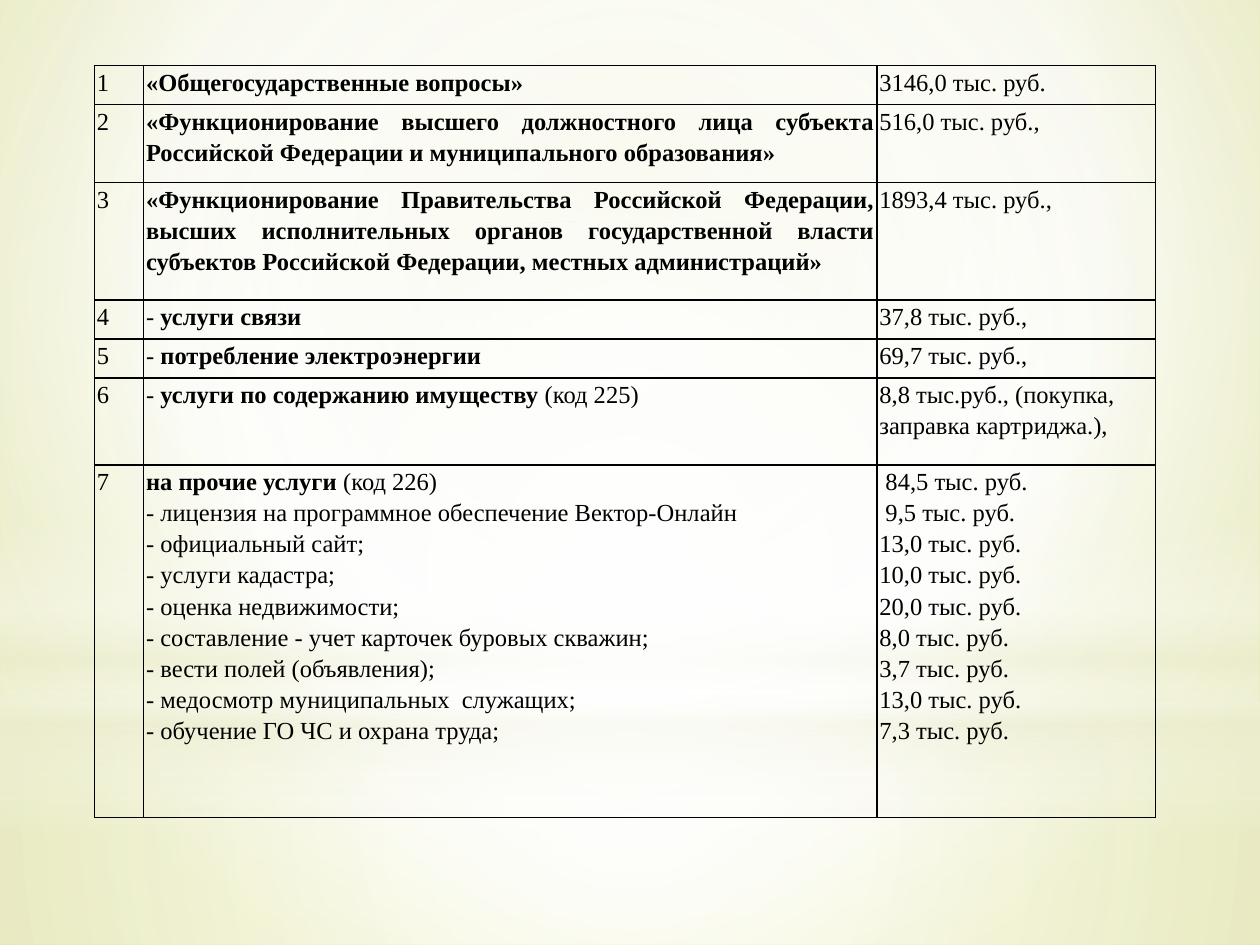
from lxml.etree import SubElement
from pptx import Presentation
from pptx.dml.color import RGBColor
from pptx.enum.shapes import MSO_SHAPE
from pptx.enum.text import PP_ALIGN
from pptx.oxml import parse_xml
from pptx.oxml.ns import nsdecls, qn
from pptx.util import Pt

PX = 9144  # EMU in one px: 100 px to the inch
BLACK = "000000"


def color(hex_value):
    return RGBColor.from_string(hex_value)


def set_gradient(fill, element, stops, focus=None):
    """Stops are (position %, colour, opacity %); focus is l, t, r, b in %."""
    fill.solid()
    solid = element.find(".//" + qn("a:solidFill"))
    gradient = parse_xml(f'<a:gradFill {nsdecls("a")} rotWithShape="1"/>')
    stop_list = SubElement(gradient, qn("a:gsLst"))
    for position, hex_value, opacity in stops:
        stop = SubElement(stop_list, qn("a:gs"), pos=str(position * 1000))
        tint = SubElement(stop, qn("a:srgbClr"), val=hex_value)
        SubElement(tint, qn("a:alpha"), val=str(opacity * 1000))
    if focus:
        circle = SubElement(gradient, qn("a:path"), path="circle")
        sides = {side: str(value * 1000) for side, value in zip("ltrb", focus)}
        SubElement(circle, qn("a:fillToRect"), sides)
    else:
        SubElement(gradient, qn("a:lin"), ang="5400000", scaled="0")
    solid.getparent().replace(solid, gradient)


prs = Presentation()
prs.slide_width, prs.slide_height = 1000 * PX, 750 * PX
slide = prs.slides.add_slide(prs.slide_layouts[6])

# Background and its soft light layers
set_gradient(slide.background.fill, slide._element,
             [(0, "E9EBC1", 100), (60, "FFFFFF", 100), (100, "DEE285", 100)],
             (20, 10, 20, 60))

CENTER = (50, 50, 50, 50)
light_layers = [
    (MSO_SHAPE.RECTANGLE, 558, 192, CENTER,
     [(0, "FFFFFF", 91), (37, "FFFFFF", 76), (100, "ECEDD1", 79)]),
    (MSO_SHAPE.RECTANGLE, 0, 558, CENTER,
     [(0, "FFFFFF", 89), (48, "FFFFFF", 62), (100, "ECEDD1", 79)]),
    (MSO_SHAPE.RECTANGLE, 412, 250, None,
     [(0, "FFFFFF", 0), (29, "FFFFFF", 30), (45, "ECEDD1", 40),
      (55, "FFFFFF", 26), (65, "ECEDD1", 60), (100, "FFFFFF", 0)]),
    (MSO_SHAPE.OVAL, 175, 558, CENTER,
     [(0, "FFFFFF", 100), (56, "FFFFFF", 0)]),
]
for outline, top, height, focus, stops in light_layers:
    layer = slide.shapes.add_shape(outline, 0, top * PX, 1000 * PX, height * PX)
    layer.shadow.inherit = False
    layer.line.fill.background()
    set_gradient(layer.fill, layer._element, stops, focus)

# Expenses: row height, item lines, amount lines; ** marks bold text
expenses = [
    (31, ["**«Общегосударственные вопросы»"], ["3146,0 тыс. руб."]),
    (62, ["**«Функционирование высшего должностного лица субъекта "
          "Российской Федерации и муниципального образования»"],
     ["516,0 тыс. руб.,"]),
    (93, ["**«Функционирование Правительства Российской Федерации, "
          "высших исполнительных органов государственной власти субъектов "
          "Российской Федерации, местных администраций»"],
     ["1893,4 тыс. руб.,"]),
    (31, ["- **услуги связи"], ["37,8 тыс. руб.,"]),
    (31, ["- **потребление электроэнергии"], ["69,7 тыс. руб.,"]),
    (69, ["- **услуги по содержанию имуществу **(код 225)"],
     ["8,8 тыс.руб., (покупка, заправка картриджа.),"]),
    (280, ["**на прочие услуги **(код 226)",
           "- лицензия на программное обеспечение Вектор-Онлайн",
           "- официальный сайт;",
           "- услуги кадастра;",
           "- оценка недвижимости;",
           "- составление - учет карточек буровых скважин;",
           "- вести полей (объявления);",
           "- медосмотр муниципальных  служащих;",
           "- обучение ГО ЧС и охрана труда;"],
     [" 84,5 тыс. руб.", " 9,5 тыс. руб.", "13,0 тыс. руб.",
      "10,0 тыс. руб.", "20,0 тыс. руб.", "8,0 тыс. руб.",
      "3,7 тыс. руб.", "13,0 тыс. руб.", "7,3 тыс. руб."]),
]
JUSTIFIED_ROWS = (2, 3)
COLUMN_WIDTHS = (39, 582, 221)
CELL_FORMAT = {"margin_left": 2 * PX, "margin_right": 2 * PX,
               "margin_top": 0, "margin_bottom": 0}
FONT_FORMAT = {"name": "Times New Roman", "size": Pt(14)}

frame = slide.shapes.add_table(
    len(expenses), len(COLUMN_WIDTHS), 75 * PX, 52 * PX,
    sum(COLUMN_WIDTHS) * PX, sum(row[0] for row in expenses) * PX)
budget = frame.table
budget.first_row = budget.horz_banding = False
for column, width in zip(budget.columns, COLUMN_WIDTHS):
    column.width = width * PX

for number, (height, items, amounts) in enumerate(expenses, 1):
    row = budget.rows[number - 1]
    row.height = height * PX
    for column, lines in enumerate(([str(number)], items, amounts)):
        cell = row.cells[column]
        for name, value in CELL_FORMAT.items():
            setattr(cell, name, value)
        cell.fill.background()

        # Thin black border on every side
        for place, side in enumerate("LRTB"):
            cell._tc.tcPr.insert(place, parse_xml(
                f'<a:ln{side} {nsdecls("a")} w="12700"><a:solidFill>'
                f'<a:srgbClr val="{BLACK}"/></a:solidFill></a:ln{side}>'))

        # Text, with every second piece in bold
        for index, line in enumerate(lines):
            text = cell.text_frame
            paragraph = text.add_paragraph() if index else text.paragraphs[0]
            paragraph.line_spacing = 1.15
            if column == 1 and number in JUSTIFIED_ROWS:
                paragraph.alignment = PP_ALIGN.JUSTIFY
            for piece, words in enumerate(line.split("**")):
                if not words:
                    continue
                run = paragraph.add_run()
                run.text = words
                for name, value in FONT_FORMAT.items():
                    setattr(run.font, name, value)
                run.font.bold = piece % 2 == 1
                run.font.color.rgb = color(BLACK)

prs.save("out.pptx")
